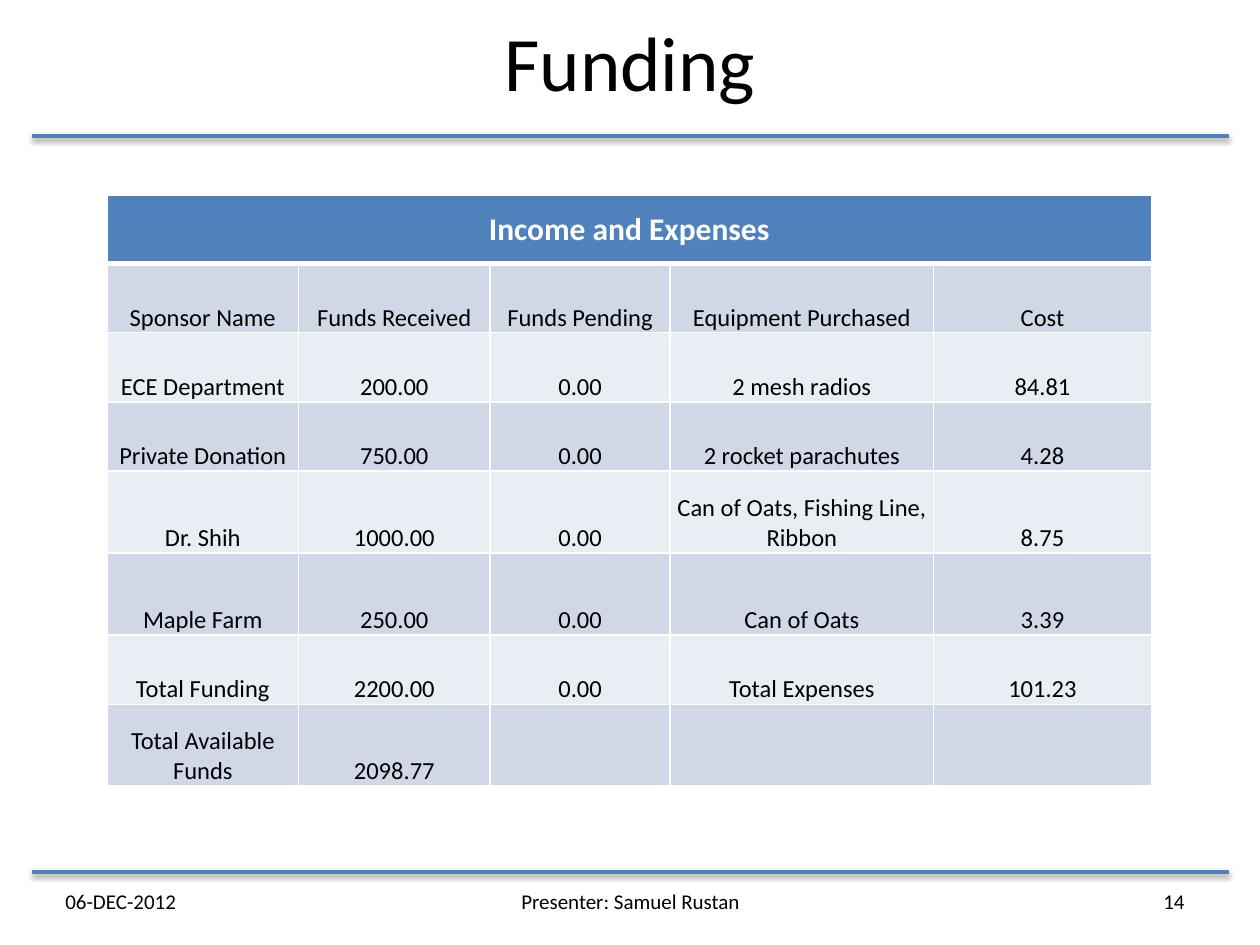
from lxml.etree import SubElement
from pptx import Presentation
from pptx.dml.color import RGBColor
from pptx.enum.text import MSO_ANCHOR, PP_ALIGN
from pptx.enum.shapes import MSO_CONNECTOR
from pptx.oxml.ns import qn
from pptx.util import Inches, Pt

COLORS = {
    "text": "000000",
    "white": "FFFFFF",
    "accent": "4F81BD",
    "band_dark": "D0D8E8",
    "band_light": "E9EDF4",
}
COLUMN_WIDTHS = [1.52, 1.52, 1.43, 2.09, 1.73]
ROW_HEIGHTS = [0.54, 0.55, 0.55, 0.55, 0.65, 0.65, 0.55, 0.65]
ROWS = [
    ["Income and Expenses", "", "", "", ""],
    ["Sponsor Name", "Funds Received", "Funds Pending", "Equipment Purchased", "Cost"],
    ["ECE Department", "200.00", "0.00", "2 mesh radios", "84.81"],
    ["Private Donation", "750.00", "0.00", "2 rocket parachutes", "4.28"],
    ["Dr. Shih", "1000.00", "0.00", "Can of Oats, Fishing Line, Ribbon", "8.75"],
    ["Maple Farm", "250.00", "0.00", "Can of Oats", "3.39"],
    ["Total Funding", "2200.00", "0.00", "Total Expenses", "101.23"],
    ["Total Available Funds", "2098.77", "", "", ""],
]
BODY_CELL = {
    "margin_left": Inches(0.01),
    "margin_right": Inches(0.01),
    "margin_top": Inches(0.01),
    "margin_bottom": 0,
    "vertical_anchor": MSO_ANCHOR.BOTTOM,
}
HEADER_CELL = {"vertical_anchor": MSO_ANCHOR.MIDDLE}


def set_attributes(target, values):
    for name, value in values.items():
        setattr(target, name, value)


class SlideBuilder:
    """Holds the style and the current slide."""

    font_name = "Calibri"

    def __init__(self, slide):
        self.slide = slide

    def color(self, name):
        return RGBColor.from_string(COLORS[name])

    def fill_text(self, text_frame, text, size, align, color="text", bold=False):
        paragraph = text_frame.paragraphs[0]
        paragraph.alignment = align
        run = paragraph.add_run()
        run.text = text
        font = {"name": self.font_name, "size": Pt(size), "bold": bold}
        set_attributes(run.font, font)
        run.font.color.rgb = self.color(color)

    def text(self, text, box, size, align):
        shape = self.slide.shapes.add_textbox(*map(Inches, box))
        frame = {"word_wrap": True, "vertical_anchor": MSO_ANCHOR.MIDDLE}
        set_attributes(shape.text_frame, frame)
        self.fill_text(shape.text_frame, text, size, align)

    def rule(self, y):
        line = self.slide.shapes.add_connector(
            MSO_CONNECTOR.STRAIGHT, Inches(0.25), Inches(y), Inches(9.75), Inches(y))
        line.line.color.rgb = self.color("accent")
        line.line.width = Pt(2)
        # Soft shadow straight below the rule
        effects = SubElement(line._element.spPr, qn("a:effectLst"))
        shadow = SubElement(effects, qn("a:outerShdw"), blurRad=str(Pt(3.1)),
                            dist=str(Pt(1.6)), dir="5400000", rotWithShape="0")
        shade = SubElement(shadow, qn("a:srgbClr"), val=COLORS["text"])
        SubElement(shade, qn("a:alpha"), val="38000")

    def borders(self, cell, widths):
        properties = cell._tc.get_or_add_tcPr()
        for side, width in widths.items():
            border = SubElement(properties, qn(f"a:ln{side}"), w=str(Pt(width)))
            fill = SubElement(border, qn("a:solidFill"))
            SubElement(fill, qn("a:srgbClr"), val=COLORS["white"])

    def table(self, rows, left, top):
        frame = self.slide.shapes.add_table(
            len(rows), len(COLUMN_WIDTHS), Inches(left), Inches(top),
            Inches(sum(COLUMN_WIDTHS)), Inches(sum(ROW_HEIGHTS)))
        table = frame.table
        for column, width in zip(table.columns, COLUMN_WIDTHS):
            column.width = Inches(width)
        for row, height in zip(table.rows, ROW_HEIGHTS):
            row.height = Inches(height)
        table.cell(0, 0).merge(table.cell(0, len(COLUMN_WIDTHS) - 1))

        for row_index, values in enumerate(rows):
            header = row_index == 0
            band = "band_dark" if row_index % 2 else "band_light"
            for column_index, value in enumerate(values):
                cell = table.cell(row_index, column_index)
                # The line under the header is thicker
                self.borders(cell, {"L": 1, "R": 1, "T": 3 if row_index == 1 else 1,
                                    "B": 3 if header else 1})
                cell.fill.solid()
                cell.fill.fore_color.rgb = self.color("accent" if header else band)
                set_attributes(cell, HEADER_CELL if header else BODY_CELL)
                if value:
                    self.fill_text(cell.text_frame, value, 18 if header else 14,
                                   PP_ALIGN.CENTER, "white" if header else "text", header)


def main():
    presentation = Presentation()
    presentation.slide_width = Inches(10)
    presentation.slide_height = Inches(7.5)
    builder = SlideBuilder(presentation.slides.add_slide(presentation.slide_layouts[6]))

    # Footer
    builder.text("06-DEC-2012", (0.42, 7, 2.33, 0.3), 12, PP_ALIGN.LEFT)
    builder.text("Presenter: Samuel Rustan", (3.42, 6.95, 3.17, 0.4), 12, PP_ALIGN.CENTER)
    builder.text("14", (7.17, 6.95, 2.33, 0.4), 12, PP_ALIGN.RIGHT)

    # Title
    builder.text("Funding", (0.5, -0.08, 9, 1.13), 44, PP_ALIGN.CENTER)

    # Income and expenses
    builder.table(ROWS, 0.85, 1.55)

    # Rules below the title and above the footer
    for y in (1.08, 6.92):
        builder.rule(y)

    presentation.save("out.pptx")


if __name__ == "__main__":
    main()
